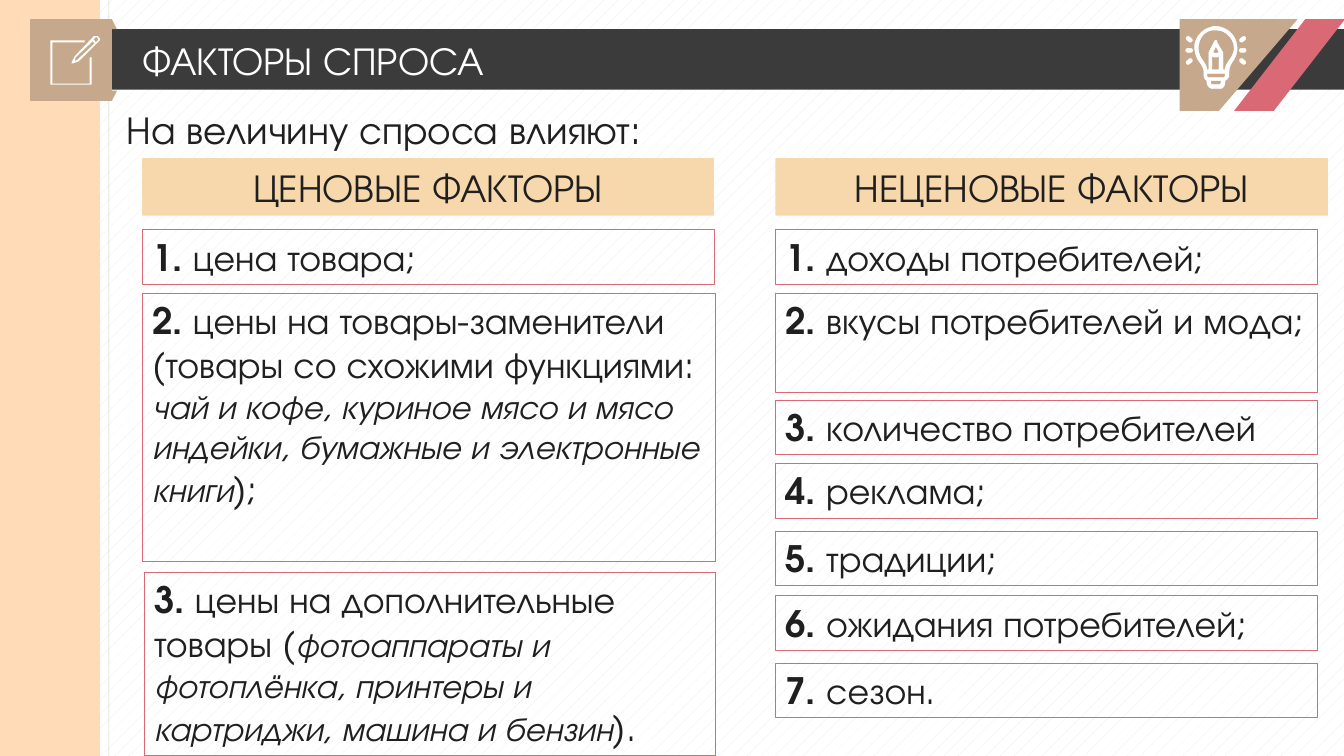
import lxml.etree
import pptx
import pptx.dml.color
import pptx.enum.dml
import pptx.enum.shapes
import pptx.enum.text
import pptx.oxml.ns
import pptx.util

Inches = pptx.util.Inches
Pt = pptx.util.Pt
RGBColor = pptx.dml.color.RGBColor
SHAPE = pptx.enum.shapes.MSO_SHAPE
ALIGN = pptx.enum.text.PP_ALIGN
qn = pptx.oxml.ns.qn

WHITE = RGBColor(0xFF, 0xFF, 0xFF)
HATCH = RGBColor(0xE9, 0xE9, 0xE9)
INK = RGBColor(0x1F, 0x1F, 0x1F)
CHARCOAL = RGBColor(0x3B, 0x3B, 0x3B)
PEACH = RGBColor(0xFF, 0xDB, 0xB7)
SAND = RGBColor(0xF6, 0xD8, 0xAC)
TAN = RGBColor(0xC6, 0xA9, 0x8C)
ROSE = RGBColor(0xD9, 0x69, 0x74)
FONT = "TeX Gyre Adventor"

# Icon contours: a pair is a corner, six numbers are a curve
BULB = [
    [(12.06, .46), (12.09, .52), (12.08, .53, 12.04, .53, 12.03, .52)],
    [(12.09, .56), (12.09, .69), (12.02, .69), (12.02, .56),
     (12.04, .57, 12.07, .57, 12.09, .56)],
    [(12.06, .3), (12.1, .3, 12.14, .31, 12.17, .34),
     (12.21, .37, 12.24, .42, 12.24, .48), (12.24, .52, 12.22, .56, 12.19, .6),
     (12.17, .63, 12.15, .66, 12.15, .69), (12.13, .69), (12.13, .52),
     (12.07, .42), (12.07, .39, 12.05, .39, 12.04, .42), (11.99, .52),
     (11.99, .69), (11.97, .69), (11.97, .66, 11.95, .63, 11.93, .6),
     (11.89, .55, 11.88, .5, 11.89, .44), (11.9, .37, 11.95, .31, 12.02, .3)],
    [(12.15, .73), (12.15, .75), (12.15, .76, 12.14, .77, 12.13, .77),
     (11.99, .77), (11.98, .77, 11.97, .76, 11.97, .75), (11.97, .73)],
    [(12.11, .8), (12.11, .82), (12.11, .83, 12.1, .84, 12.09, .84),
     (12.02, .84), (12.01, .84, 12.01, .83, 12.01, .82), (12.01, .8)],
    [(12.05, .26), (12.04, .26, 12.03, .26, 12.01, .27),
     (11.94, .28, 11.87, .35, 11.85, .43), (11.84, .5, 11.86, .57, 11.9, .62),
     (11.92, .65, 11.94, .68, 11.94, .71), (11.94, .75),
     (11.94, .77, 11.95, .79, 11.97, .8), (11.97, .82),
     (11.97, .85, 12, .88, 12.03, .88), (12.1, .88),
     (12.13, .88, 12.15, .85, 12.15, .82), (12.15, .8),
     (12.17, .79, 12.19, .77, 12.19, .75), (12.19, .71),
     (12.19, .68, 12.2, .65, 12.22, .62), (12.25, .58, 12.27, .53, 12.27, .48),
     (12.27, .41, 12.24, .35, 12.19, .31), (12.15, .28, 12.1, .26, 12.05, .26)],
]
SHEET = [[(.84, .4), (.5, .4), (.5, .84), (.91, .84), (.91, .57), (.89, .57),
          (.89, .83), (.52, .83), (.52, .42), (.84, .42)]]
PENCIL = [
    [(.97, .4), (.95, .42), (.93, .39), (.95, .37), (.96, .37), (.97, .38)],
    [(.77, .59), (.74, .61), (.75, .57), (.92, .41), (.94, .43)],
    [(.99, .38), (.97, .36), (.95, .36), (.93, .36), (.74, .56), (.71, .62),
     (.71, .63), (.72, .63), (.78, .61), (.98, .41), (.99, .4)],
]


def corners(contour, steps=6):
    """Turn the curves of a contour into short straight pieces."""
    points = []
    for item in contour:
        if len(item) == 2:
            points.append(item)
            continue
        knots = [points[-1], item[:2], item[2:4], item[4:]]
        for step in range(1, steps + 1):
            t = step / steps
            weights = ((1 - t) ** 3, 3 * t * (1 - t) ** 2, 3 * t * t * (1 - t), t ** 3)
            points.append(tuple(sum(w * knot[axis] for w, knot in zip(weights, knots))
                                for axis in (0, 1)))
    return [(Inches(x), Inches(y)) for x, y in points]


class Board:
    def __init__(self, page):
        self.page = page
        self.shapes = page.shapes

    def start_group(self):
        self.shapes = self.page.shapes.add_group_shape().shapes

    def end_group(self):
        self.shapes = self.page.shapes

    def paint(self, shape, fill, line=None, width=0.75):
        shape.shadow.inherit = False
        if fill is None:
            shape.fill.background()
        else:
            shape.fill.solid()
            shape.fill.fore_color.rgb = fill
        if line is None:
            shape.line.fill.background()
        else:
            shape.line.color.rgb = line
            shape.line.width = Pt(width)
        return shape

    def block(self, place, fill, line=None, kind=SHAPE.RECTANGLE, width=0.75):
        shape = self.shapes.add_shape(kind, *map(Inches, place))
        return self.paint(shape, fill, line, width)

    def outline(self, contours, fill, line=None):
        first, *others = [corners(contour) for contour in contours]
        builder = self.shapes.build_freeform(*first[0], scale=1.0)
        builder.add_line_segments(first[1:], close=True)
        for points in others:
            builder.move_to(*points[0])
            builder.add_line_segments(points[1:], close=True)
        return self.paint(builder.convert_to_shape(), fill, line, 0.25)

    def rule(self, x, height):
        line = self.shapes.add_connector(pptx.enum.shapes.MSO_CONNECTOR.STRAIGHT,
                                         Inches(x), 0, Inches(x), Inches(height))
        line.line.color.rgb = INK
        line.line.width = Pt(0.5)
        color = line.element.spPr.find(".//" + qn("a:srgbClr"))
        lxml.etree.SubElement(color, qn("a:alpha")).set("val", "20000")
        lxml.etree.SubElement(line.element.spPr, qn("a:effectLst"))

    def fill_text(self, box, spans, color=INK, align=ALIGN.LEFT):
        """Each span is text, size, bold, italic."""
        frame = box.text_frame
        frame.word_wrap = True
        frame.auto_size = pptx.enum.text.MSO_AUTO_SIZE.SHAPE_TO_FIT_TEXT
        frame.vertical_anchor = pptx.enum.text.MSO_ANCHOR.TOP
        para = frame.paragraphs[0]
        para.alignment = align
        for text, size, bold, italic in spans:
            span = para.add_run()
            span.text = text
            span.font.name = FONT
            span.font.size = Pt(size)
            span.font.bold, span.font.italic = bold, italic
            span.font.color.rgb = color
        return frame

    def label(self, place, text, color=INK):
        box = self.shapes.add_textbox(*map(Inches, place))
        return self.fill_text(box, [(text, 28, False, False)], color)

    def heading(self, place, text):
        self.fill_text(self.block(place, SAND), [(text, 28, False, False)],
                       align=ALIGN.CENTER)

    def factor(self, place, number, text, examples="", ending=""):
        spans = [(f"{number}. ", 26, True, False), (text, 26, False, False)]
        if examples:
            spans += [(examples, 24, False, True), (ending, 26, False, False)]
        self.fill_text(self.block(place, None, ROSE), spans)


deck = pptx.Presentation()
deck.slide_width, deck.slide_height = Inches(13.33), Inches(7.5)
page = deck.slides.add_slide(deck.slide_layouts[6])
backdrop = page.background.fill
backdrop.patterned()
backdrop.pattern = pptx.enum.dml.MSO_PATTERN.PERCENT_5
backdrop.fore_color.rgb = HATCH
backdrop.back_color.rgb = WHITE
board = Board(page)

# Title bar and side band
board.rule(1.08, 7.5)
board.block((0, 0.29, 13.33, 0.6), CHARCOAL)
board.block((0, 0, 0.99, 7.5), PEACH)

# Notepad badge
board.start_group()
board.block((0.3, 0.19, 0.81, 0.81), TAN)
board.block((1.11, 0.19, 0.05, 0.1), TAN, kind=SHAPE.RIGHT_TRIANGLE)
fold = board.block((1.11, 0.9, 0.05, 0.1), TAN, kind=SHAPE.RIGHT_TRIANGLE)
fold.element.spPr.xfrm.set("flipV", "1")
board.end_group()

# Corner ribbon
board.start_group()
board.outline([[(11.7, 0.19), (12.87, 0.19), (12.09, 1.1), (11.7, 1.1)]], TAN)
stripe = board.block((12.24, 0.19, 1.1, 0.91), ROSE, kind=SHAPE.PARALLELOGRAM)
stripe.adjustments[0] = 0.776
board.end_group()

# Light bulb with its rays
board.start_group()
board.outline(BULB, WHITE, WHITE)
for left, side in ((11.76, 1), (12.29, -1)):
    for top, turn in ((0.37, 40), (0.48, 0), (0.59, -40)):
        ray = board.block((left, top, 0.07, 0.04), WHITE, WHITE,
                          SHAPE.ROUNDED_RECTANGLE, 0.25)
        ray.adjustments[0] = 0.5
        ray.rotation = side * turn
board.end_group()

# Sheet and pencil
board.outline(SHEET, WHITE)
board.outline(PENCIL, WHITE)

# Title and lead-in
title = board.label((1.41, 0.36, 10.54, 0.47), "ФАКТОРЫ СПРОСА", WHITE)
title.margin_left = title.margin_right = title.margin_top = title.margin_bottom = 0
title.vertical_anchor = pptx.enum.text.MSO_ANCHOR.MIDDLE
board.label((1.16, 1, 11.71, 0.57), "На величину спроса влияют:")

# Price factors
board.heading((1.41, 1.57, 5.67, 0.57), "ЦЕНОВЫЕ ФАКТОРЫ")
board.factor((1.41, 2.28, 5.68, 0.54), 1, "цена товара;")
board.factor((1.41, 2.91, 5.69, 2.66), 2,
             "цены на товары-заменители (товары со схожими функциями: ",
             "чай и кофе, куриное мясо и мясо индейки, бумажные и электронные книги", ");")
board.factor((1.43, 5.68, 5.67, 1.82), 3, "цены на дополнительные товары (",
             "фотоаппараты и фотоплёнка, принтеры и картриджи, машина и бензин", ").")

# Other factors
board.heading((7.69, 1.57, 5.48, 0.57), "НЕЦЕНОВЫЕ ФАКТОРЫ")
OTHER_FACTORS = [
    (2.28, 0.54, "доходы потребителей;"), (2.91, 0.98, "вкусы потребителей и мода;"),
    (3.97, 0.54, "количество потребителей"), (4.6, 0.54, "реклама;"),
    (5.27, 0.54, "традиции;"), (5.91, 0.54, "ожидания потребителей;"),
    (6.58, 0.54, "сезон."),
]
for number, (top, height, text) in enumerate(OTHER_FACTORS, 1):
    board.factor((7.69, top, 5.38, height), number, text)

deck.save("out.pptx")
